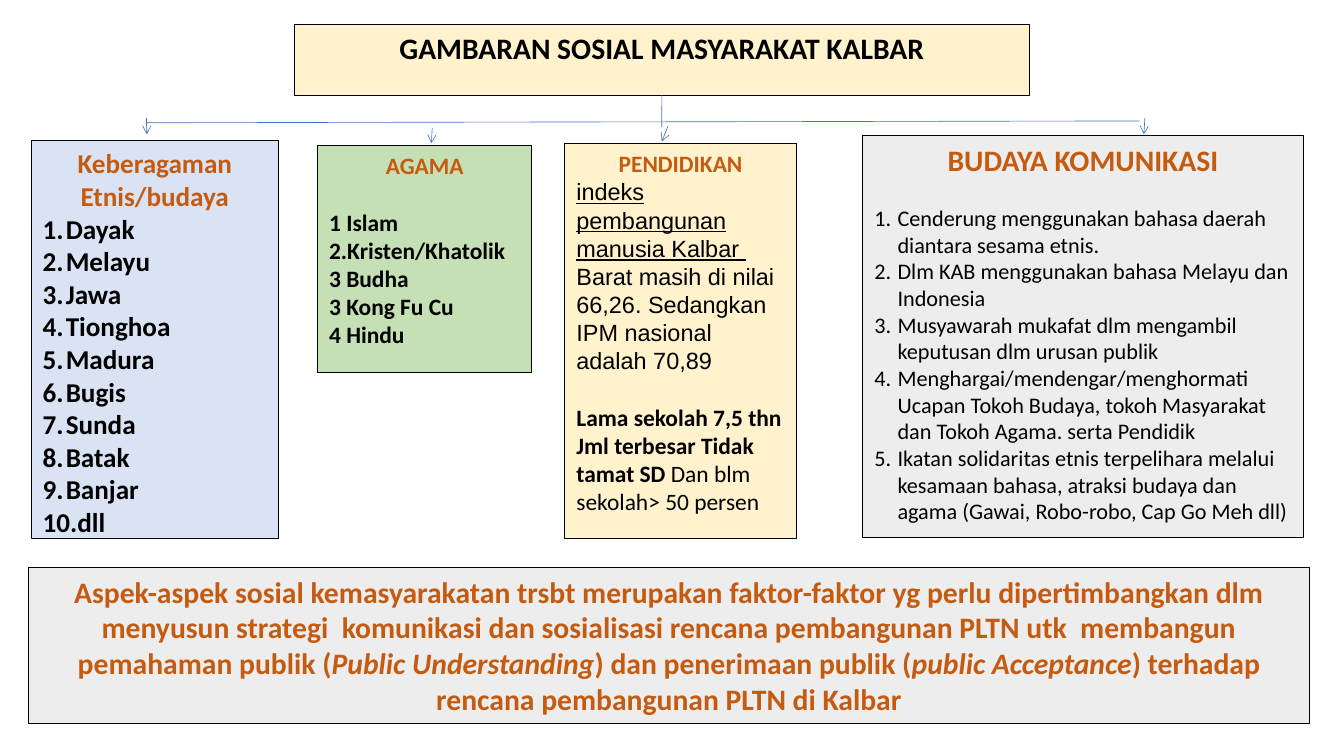
from lxml.etree import SubElement
from pptx import Presentation
from pptx.dml.color import RGBColor
from pptx.enum.shapes import MSO_CONNECTOR, MSO_SHAPE
from pptx.enum.text import MSO_ANCHOR, MSO_AUTO_SIZE, PP_ALIGN
from pptx.oxml.ns import qn
from pptx.util import Inches, Pt

BLACK, ORANGE, BLUE = "000000", "C55A11", "4472C4"
CREAM, GREEN, PALE_BLUE, GREY = "FFF2CC", "C5E0B4", "DAE3F3", "EDEDED"
CENTER, LEFT = PP_ALIGN.CENTER, PP_ALIGN.LEFT

presentation = Presentation()
presentation.slide_width, presentation.slide_height = Inches(15.11), Inches(8.5)
slide = presentation.slides.add_slide(presentation.slide_layouts[5])


def color(hex_string):
    return RGBColor.from_string(hex_string)


def place(*lengths):
    """Turn alternating percentages of slide width and height into lengths."""
    sizes = (presentation.slide_width, presentation.slide_height)
    return [round(share * sizes[i % 2] / 100) for i, share in enumerate(lengths)]


# A paragraph is (kind, size, colour, space before, runs); a run is (text, font values).
bold, plain = {"bold": True}, {"bold": False}
italic = {"bold": True, "italic": True}
arial = {"name": "Arial"}

ethnic_groups = ["Dayak", "Melayu", "Jawa", "Tionghoa", "Madura",
                 "Bugis", "Sunda", "Batak", "Banjar", "dll"]
religions = ["1 Islam", "2.Kristen/Khatolik", "3 Budha", "3 Kong Fu Cu", "4 Hindu"]
habits = [
    "Cenderung menggunakan bahasa daerah diantara sesama etnis.",
    "Dlm KAB menggunakan bahasa Melayu dan Indonesia",
    "Musyawarah mukafat dlm mengambil keputusan dlm urusan publik",
    "Menghargai/mendengar/menghormati Ucapan Tokoh Budaya, tokoh Masyarakat "
    "dan Tokoh Agama. serta Pendidik",
    "Ikatan solidaritas etnis terpelihara melalui kesamaan bahasa, atraksi budaya "
    "dan agama (Gawai, Robo-robo, Cap Go Meh dll)",
]

title_text = [("center", 24, BLACK, 0, [("GAMBARAN SOSIAL MASYARAKAT KALBAR", bold)])]
education_text = [
    ("center", 19, ORANGE, 0, [("PENDIDIKAN", bold)]),
    ("left", 19, BLACK, 0, [
        ("indeks pembangunan manusia Kalbar ", arial | {"underline": True}),
        (" Barat masih di nilai 66,26. Sedangkan IPM nasional adalah 70,89", arial)]),
    ("left", 19, BLACK, 23, [("Lama sekolah 7,5 thn", bold)]),
    ("left", 19, BLACK, 0, [("Jml terbesar Tidak tamat SD ", bold),
                            ("Dan blm sekolah> 50 persen", plain)]),
]
religion_text = [("center", 19, ORANGE, 0, [("AGAMA", bold)])] + [
    ("left", 19, BLACK, 0 if i else 23, [(name, bold)]) for i, name in enumerate(religions)]
ethnic_text = [("center", 22, ORANGE, 0, [("Keberagaman Etnis/budaya", bold)])] + [
    ("numbered", 22, BLACK, 0, [(name, bold)]) for name in ethnic_groups]
culture_text = [("center", 24, ORANGE, 0, [("BUDAYA KOMUNIKASI", bold)])] + [
    ("numbered", 18, BLACK, 0 if i else 22, [(habit, plain)]) for i, habit in enumerate(habits)]
conclusion_text = [("center", 24, ORANGE, 0, [
    ("Aspek-aspek sosial kemasyarakatan trsbt merupakan faktor-faktor yg perlu "
     "dipertimbangkan dlm menyusun strategi  komunikasi dan sosialisasi rencana "
     "pembangunan PLTN utk  membangun pemahaman publik (", bold),
    ("Public Understanding", italic),
    (") dan penerimaan publik (", bold),
    ("public Acceptance", italic),
    (") terhadap rencana pembangunan PLTN di Kalbar", bold)])]

title = slide.shapes.title
boxes = [
    (title, (21.91, 3.18, 54.67, 9.41), CREAM, title_text),
    (None, (2.32, 18.59, 18.4, 52.59), PALE_BLUE, ethnic_text),
    (None, (23.63, 19.18, 15.95, 30.12), GREEN, religion_text),
    (None, (42.03, 18.94, 17.21, 52.35), CREAM, education_text),
    (None, (64.2, 17.88, 32.76, 53.18), GREY, culture_text),
    (None, (2.12, 75.06, 95.3, 20.59), GREY, conclusion_text),
]
for placeholder, shares, fill, paragraphs in boxes:
    shape = placeholder or slide.shapes.add_shape(MSO_SHAPE.RECTANGLE, *place(*shares))
    shape.left, shape.top, shape.width, shape.height = place(*shares)
    shape.shadow.inherit = False
    shape.fill.solid()
    shape.fill.fore_color.rgb = color(fill)
    shape.line.color.rgb = color(BLACK)
    shape.line.width = Pt(0.75)

    frame = shape.text_frame
    frame_format = {
        "word_wrap": True, "auto_size": MSO_AUTO_SIZE.NONE, "vertical_anchor": MSO_ANCHOR.TOP,
        "margin_left": Inches(0.13), "margin_right": Inches(0.13),
        "margin_top": Inches(0.07), "margin_bottom": Inches(0.07),
    }
    for name, value in frame_format.items():
        setattr(frame, name, value)

    for i, (kind, size, text_color, gap, runs) in enumerate(paragraphs):
        paragraph = frame.add_paragraph() if i else frame.paragraphs[0]
        paragraph.alignment = CENTER if kind == "center" else LEFT
        paragraph.space_before = Pt(gap)
        if kind == "numbered":
            properties = paragraph._p.get_or_add_pPr()
            properties.set("marL", str(Inches(0.26)))
            properties.set("indent", str(-Inches(0.26)))
            SubElement(properties, qn("a:buAutoNum"), type="arabicPeriod")
        for text, values in runs:
            run = paragraph.add_run()
            run.text = text
            run.font.color.rgb = color(text_color)
            for name, value in ({"name": "Calibri", "size": Pt(size)} | values).items():
                setattr(run.font, name, value)

# Each line: start x, start y, end x, end y, arrowhead at the end
lines = [
    (49.24, 12.59, 49.24, 16.82, False),
    (10.92, 16.24, 84.78, 16, False),
    (10.92, 15.65, 10.92, 17.76, True),
    (32.16, 16.94, 32.1, 18.94, True),
    (49.7, 16.71, 49.24, 18.71, True),
    (85.18, 15.65, 85.11, 17.76, True),
]
for number, (*ends, has_arrow) in enumerate(lines):
    connector = slide.shapes.add_connector(MSO_CONNECTOR.STRAIGHT, *place(*ends))
    if number == 0:
        connector.begin_connect(title, 2)
    connector.line.color.rgb = color(BLUE)
    connector.line.width = Pt(0.5)
    if has_arrow:
        SubElement(connector.line._get_or_add_ln(), qn("a:tailEnd"), type="arrow")
    SubElement(connector._element.spPr, qn("a:effectLst"))

presentation.save("out.pptx")
